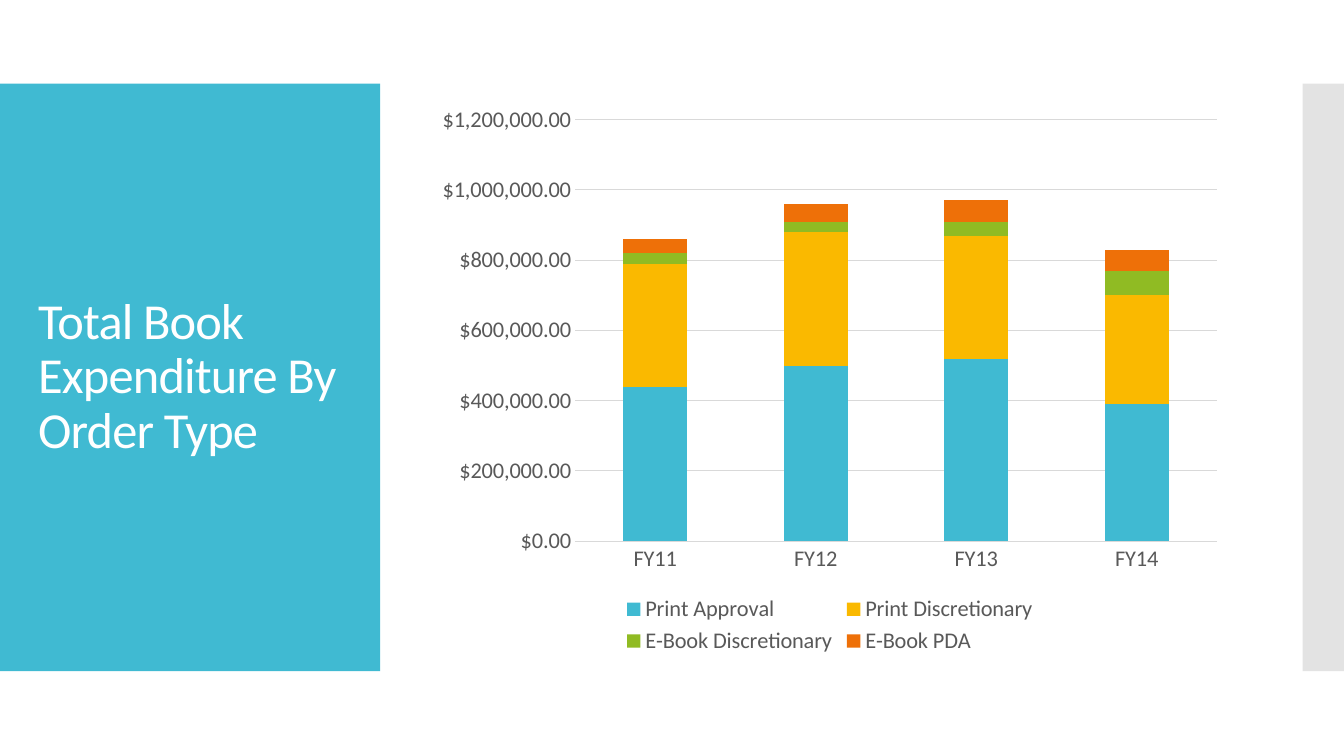
from pptx import Presentation, util as u
from pptx.chart.data import CategoryChartData
from pptx.dml.color import RGBColor
from pptx.enum import chart as ch, shapes, text
from pptx.oxml import parse_xml
from pptx.oxml.ns import nsdecls

W, H = 13.33, 7.5
FONT = "Calibri"
BLUE, GRAY, GRID, LABEL = "40BAD2", "C8C8C8", "D9D9D9", "595959"
BAND_TOP, BAND_HEIGHT = 0.83, 5.83

YEARS = ["FY11", "FY12", "FY13", "FY14"]
ORDER_TYPES = [
    ("Print Approval", BLUE, (440000, 500000, 520000, 390000)),
    ("Print Discretionary", "FAB900", (350000, 380000, 350000, 310000)),
    ("E-Book Discretionary", "90BB23", (30000, 30000, 40000, 70000)),
    ("E-Book PDA", "EE7008", (40000, 50000, 60000, 60000)),
]


def rgb(value):
    return RGBColor.from_string(value)


def inches(*lengths):
    return [u.Inches(n) for n in lengths]


def style_font(font, size, color):
    font.name, font.size = FONT, u.Pt(size)
    font.color.rgb = rgb(color)


def style_line(line, color):
    line.color.rgb = rgb(color)
    line.width = u.Pt(0.75)


def add_band(s, left, width, color, opacity=100):
    sp = s.shapes.add_shape(shapes.MSO_SHAPE.RECTANGLE,
                            *inches(left, BAND_TOP, width, BAND_HEIGHT))
    sp.shadow.inherit = False
    sp.line.fill.background()
    sp.fill.solid()
    sp.fill.fore_color.rgb = rgb(color)
    if opacity < 100:
        clr = sp.fill._xPr.find(".//{*}srgbClr")
        clr.append(parse_xml(f'<a:alpha {nsdecls("a")} val="{opacity * 1000}"/>'))


def add_text(s, words, box, size=18, color="000000", line_spacing=1.0, tracking=0):
    tf = s.shapes.add_textbox(*inches(*box)).text_frame
    tf.word_wrap = True
    tf.vertical_anchor = text.MSO_ANCHOR.MIDDLE
    p = tf.paragraphs[0]
    p.line_spacing = line_spacing
    r = p.add_run()
    r.text = words
    style_font(r.font, size, color)
    r.font._element.set("spc", str(round(tracking * 100)))


def add_stacked_chart(s, box):
    data = CategoryChartData(number_format='"$"#,##0.00')
    data.categories = YEARS
    for name, _, values in ORDER_TYPES:
        data.add_series(name, values)
    chart = s.shapes.add_chart(ch.XL_CHART_TYPE.COLUMN_STACKED,
                               *inches(*box), data).chart
    chart.has_title = False
    style_font(chart.font, 16, LABEL)

    # Columns
    plot = chart.plots[0]
    plot.gap_width, plot.overlap = 150, 100
    plot.vary_by_categories = False
    for series, (_, color, _) in zip(plot.series, ORDER_TYPES):
        series.format.fill.solid()
        series.format.fill.fore_color.rgb = rgb(color)

    # Axes
    for axis in (chart.category_axis, chart.value_axis):
        axis.major_tick_mark = axis.minor_tick_mark = ch.XL_TICK_MARK.NONE
        style_font(axis.tick_labels.font, 16, LABEL)
    style_line(chart.category_axis.format.line, GRID)
    amounts = chart.value_axis
    amounts.minimum_scale, amounts.maximum_scale = 0, 1200000
    amounts.major_unit = 200000
    amounts.format.line.fill.background()
    amounts.has_major_gridlines = True
    style_line(amounts.major_gridlines.format.line, GRID)
    amounts.tick_labels.number_format = '"$"#,##0.00'
    amounts.tick_labels.number_format_is_linked = False

    # Legend
    chart.has_legend = True
    chart.legend.position = ch.XL_LEGEND_POSITION.BOTTOM
    chart.legend.include_in_layout = False
    style_font(chart.legend.font, 16, LABEL)


def main():
    prs = Presentation()
    prs.slide_width, prs.slide_height = inches(W, H)
    s = prs.slides.add_slide(prs.slide_layouts[6])

    # Side bands
    add_band(s, 0, 3.77, BLUE)
    add_band(s, 12.92, W - 12.92, GRAY, opacity=50)

    # Title and chart
    add_text(s, "Total Book Expenditure By Order Type", (0.28, 1.23, 3.22, 5.03),
             size=36, color="FFFFFF", line_spacing=0.9, tracking=-0.6)
    add_stacked_chart(s, (4.23, 0.94, 8, 5.6))

    prs.save("out.pptx")


if __name__ == "__main__":
    main()
